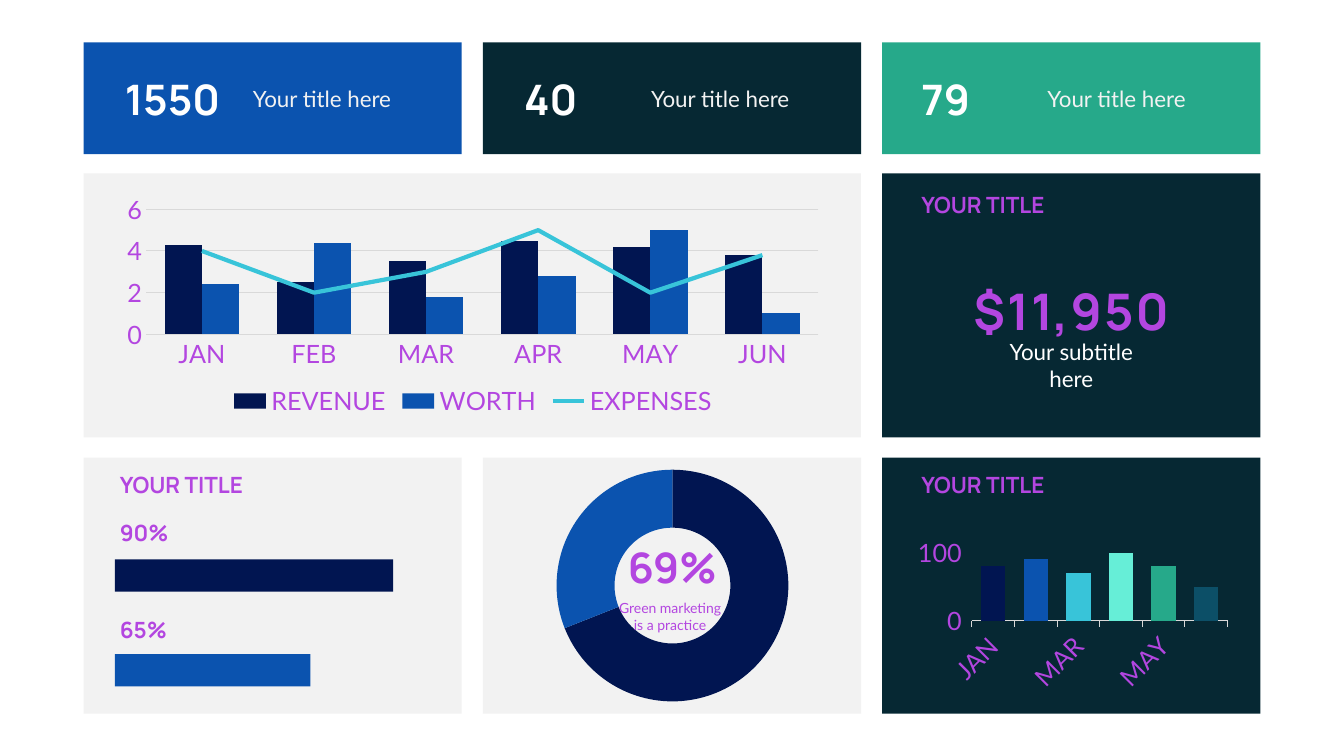
from lxml import etree
from pptx import Presentation
from pptx.chart.data import CategoryChartData
from pptx.dml.color import RGBColor
from pptx.enum.chart import XL_CHART_TYPE, XL_LEGEND_POSITION, XL_MARKER_STYLE, XL_TICK_MARK
from pptx.enum.shapes import MSO_SHAPE
from pptx.enum.text import MSO_ANCHOR, MSO_AUTO_SIZE, PP_ALIGN
from pptx.oxml import parse_xml
from pptx.oxml.ns import nsdecls, qn
from pptx.util import Inches, Pt

COLUMNS, DOUGHNUT = XL_CHART_TYPE.COLUMN_CLUSTERED, XL_CHART_TYPE.DOUGHNUT
LEGEND_BOTTOM, NO_MARKER = XL_LEGEND_POSITION.BOTTOM, XL_MARKER_STYLE.NONE
TICK_NONE, TICK_OUT = XL_TICK_MARK.NONE, XL_TICK_MARK.OUTSIDE
RECTANGLE, GROW = MSO_SHAPE.RECTANGLE, MSO_AUTO_SIZE.SHAPE_TO_FIT_TEXT
TOP, MIDDLE, BOTTOM = MSO_ANCHOR.TOP, MSO_ANCHOR.MIDDLE, MSO_ANCHOR.BOTTOM
LEFT, CENTER = PP_ALIGN.LEFT, PP_ALIGN.CENTER

WHITE = RGBColor(0xFF, 0xFF, 0xFF)
LIGHT = RGBColor(0xF2, 0xF2, 0xF2)
RULE = RGBColor(0xD9, 0xD9, 0xD9)
PURPLE = RGBColor(0xB3, 0x46, 0xE0)
NAVY = RGBColor(0x01, 0x15, 0x51)
BLUE = RGBColor(0x0B, 0x53, 0xAF)
CYAN = RGBColor(0x38, 0xC4, 0xD9)
MINT = RGBColor(0x66, 0xEE, 0xD7)
GREEN = RGBColor(0x26, 0xA9, 0x8A)
TEAL = RGBColor(0x0C, 0x4F, 0x67)
DARK = RGBColor(0x06, 0x28, 0x33)

MONTHS = ["JAN", "FEB", "MAR", "APR", "MAY", "JUN"]
CARD_LEFTS = [0.83 + 3.96 * column for column in range(3)]
CARD_WIDTH = 3.75
WIDE_WIDTH = 7.71

HEADING = {"name": "Manrope", "size": Pt(16), "bold": True, "color": PURPLE}
NUMBER = {**HEADING, "size": Pt(30)}
AMOUNT = {**HEADING, "size": Pt(36)}
LABEL = {"name": "Lato", "size": Pt(16), "color": LIGHT}
CAPTION = {**LABEL, "size": Pt(10), "color": PURPLE}
CHART_TEXT = {**LABEL, "size": Pt(18), "color": PURPLE}

LINE_PLOT = f"""<c:lineChart {nsdecls('c')}><c:grouping val="standard"/>
<c:varyColors val="0"/><c:marker val="1"/><c:axId val="501"/><c:axId val="502"/></c:lineChart>"""
HIDDEN_AXIS = """<c:{kind} {ns}><c:axId val="{own}"/><c:scaling><c:orientation val="minMax"/>{limits}
</c:scaling><c:delete val="1"/><c:axPos val="{side}"/><c:majorTickMark val="none"/>
<c:minorTickMark val="none"/><c:tickLblPos val="nextTo"/><c:crossAx val="{other}"/>
<c:crosses val="{crosses}"/></c:{kind}>"""


def apply_font(font, style):
    for name, value in style.items():
        if name == "color":
            font.color.rgb = value
        else:
            setattr(font, name, value)


def paint(format_holder, color):
    format_holder.fill.solid()
    format_holder.fill.fore_color.rgb = color


def style_axis(axis, tick, visible_line):
    axis.major_tick_mark = tick
    axis.has_major_gridlines = False
    apply_font(axis.tick_labels.font, CHART_TEXT)
    if visible_line:
        axis.format.line.color.rgb = RULE
        axis.format.line.width = Pt(0.75)
    else:
        axis.format.line.fill.background()


def move_last_series_to_line(chart, maximum):
    """Draw the last column series as a line on hidden secondary axes."""
    plot_area = chart._chartSpace.chart.plotArea
    bars = plot_area.find(qn("c:barChart"))
    series = bars.findall(qn("c:ser"))[-1]
    for invert in series.findall(qn("c:invertIfNegative")):
        series.remove(invert)
    line_plot = parse_xml(LINE_PLOT)
    line_plot.find(qn("c:varyColors")).addnext(series)
    bars.addnext(line_plot)
    limits = f'<c:max val="{maximum}"/><c:min val="0"/>'
    last_axis = plot_area.findall(qn("c:valAx"))[-1]
    for kind, own, other, side, scale, crosses in (
        ("valAx", 502, 501, "r", limits, "max"),
        ("catAx", 501, 502, "b", "", "autoZero"),
    ):
        last_axis.addnext(parse_xml(HIDDEN_AXIS.format(
            ns=nsdecls("c"), kind=kind, own=own, other=other,
            side=side, limits=scale, crosses=crosses)))
    return chart.plots[1].series[0]


def fill_plot_area(chart):
    """Stretch the inner plot area over the whole chart frame."""
    plot_area = chart._chartSpace.chart.plotArea
    for old in plot_area.findall(qn("c:layout")):
        plot_area.remove(old)
    layout = etree.SubElement(plot_area, qn("c:layout"))
    manual = etree.SubElement(layout, qn("c:manualLayout"))
    for tag, value in (("layoutTarget", "inner"), ("xMode", "edge"), ("yMode", "edge"),
                       ("x", "0"), ("y", "0"), ("w", "1"), ("h", "1")):
        etree.SubElement(manual, qn(f"c:{tag}")).set("val", value)
    plot_area.insert(0, layout)


class Dashboard:
    def __init__(self, slide):
        self.slide = slide

    def block(self, left, top, width, height, color):
        shape = self.slide.shapes.add_shape(
            RECTANGLE, Inches(left), Inches(top), Inches(width), Inches(height))
        shape.shadow.inherit = False
        paint(shape, color)
        shape.line.fill.background()

    def text(self, words, left, top, width, height, style, align=LEFT, anchor=MIDDLE, wrap=False):
        box = self.slide.shapes.add_textbox(
            Inches(left), Inches(top), Inches(width), Inches(height))
        frame = box.text_frame
        for name, value in {"word_wrap": wrap, "auto_size": GROW, "vertical_anchor": anchor}.items():
            setattr(frame, name, value)
        paragraph = frame.paragraphs[0]
        paragraph.alignment = align
        run = paragraph.add_run()
        run.text = words
        apply_font(run.font, style)
        return box

    def chart(self, kind, left, top, width, height, categories, series):
        data = CategoryChartData()
        data.categories = categories
        for name, values in series:
            data.add_series(name, values)
        chart = self.slide.shapes.add_chart(
            kind, Inches(left), Inches(top), Inches(width), Inches(height), data).chart
        chart.has_title = False
        chart.has_legend = False
        apply_font(chart.font, CHART_TEXT)
        return chart

    def finance_chart(self):
        chart = self.chart(COLUMNS, 1.12, 1.88, 7.14, 2.3, MONTHS, [
            ("REVENUE", [4.3, 2.5, 3.5, 4.5, 4.2, 3.8]),
            ("WORTH", [2.4, 4.4, 1.8, 2.8, 5, 1]),
            ("EXPENSES", [4, 2, 3, 5, 2, 3.8])])
        style_axis(chart.category_axis, TICK_NONE, True)
        axis = chart.value_axis
        style_axis(axis, TICK_NONE, False)
        for name, value in {"minimum_scale": 0, "maximum_scale": 6, "major_unit": 2}.items():
            setattr(axis, name, value)
        axis.major_gridlines.format.line.color.rgb = RULE
        axis.major_gridlines.format.line.width = Pt(0.75)
        expenses = move_last_series_to_line(chart, 6)
        expenses.smooth = False
        expenses.marker.style = NO_MARKER
        expenses.format.line.color.rgb = CYAN
        expenses.format.line.width = Pt(3)
        columns = chart.plots[0]
        columns.vary_by_categories = False
        columns.gap_width = 100
        for series, color in zip(columns.series, (NAVY, BLUE)):
            paint(series.format, color)
        chart.has_legend = True
        chart.legend.position = LEGEND_BOTTOM
        chart.legend.include_in_layout = False
        apply_font(chart.legend.font, CHART_TEXT)

    def share_chart(self):
        chart = self.chart(DOUGHNUT, 5.52, 4.66, 2.3, 2.3, ["1", "2"], [("Series 1", [69, 31])])
        fill_plot_area(chart)
        chart._chartSpace.find(".//" + qn("c:holeSize")).set("val", "85")
        self.paint_points(chart, (NAVY, BLUE))

    def monthly_chart(self):
        chart = self.chart(COLUMNS, 9.04, 5.11, 3.2, 1.79, MONTHS,
                           [("Series 1", [80, 90, 70, 100, 80, 50])])
        style_axis(chart.category_axis, TICK_OUT, True)
        style_axis(chart.value_axis, TICK_OUT, False)
        chart.plots[0].gap_width = 75
        chart.plots[0].overlap = 28
        self.paint_points(chart, (NAVY, BLUE, CYAN, MINT, GREEN, TEAL))

    def paint_points(self, chart, colors):
        for index, color in enumerate(colors):
            paint(chart.plots[0].series[0].points[index].format, color)


def main():
    presentation = Presentation()
    presentation.slide_width, presentation.slide_height = Inches(13.33), Inches(7.5)
    board = Dashboard(presentation.slides.add_slide(presentation.slide_layouts[6]))

    for left, top_color, bottom_color in zip(CARD_LEFTS, (BLUE, DARK, GREEN), (LIGHT, LIGHT, DARK)):
        board.block(left, 0.42, CARD_WIDTH, 1.11, top_color)
        board.block(left, 4.54, CARD_WIDTH, 2.54, bottom_color)
    board.block(CARD_LEFTS[0], 1.72, WIDE_WIDTH, 2.62, LIGHT)
    board.block(CARD_LEFTS[2], 1.72, CARD_WIDTH, 2.62, DARK)

    for number, left, width, label_left in (
            ("1550", 1.14, 1.18, 2.41), ("40", 5.1, 0.76, 6.36), ("79", 9.04, 0.69, 10.29)):
        board.text(number, left, 0.67, width, 0.61, {**NUMBER, "color": WHITE})
        board.text("Your title here", label_left, 0.79, 1.57, 0.37, LABEL)

    board.finance_chart()
    for percent, label_top, bar_top, width, color in (
            ("90%", 5.1, 5.55, 2.76, NAVY), ("65%", 6.06, 6.49, 1.94, BLUE)):
        board.block(1.14, bar_top, width, 0.32, color)
        board.text(percent, 1.09, label_top, 0.69, 0.37, HEADING)

    board.share_chart()
    board.text("69%", 6.12, 5.31, 1.1, 0.61, NUMBER, CENTER, BOTTOM)
    caption = board.text("Green marketing is a practice", 6.06, 5.9, 1.22, 0.44,
                         CAPTION, CENTER, TOP, True)
    caption.text_frame.margin_left = Inches(0.05)

    board.monthly_chart()
    for left, top in ((1.09, 4.62), (9.04, 4.62), (9.04, 1.84)):
        board.text("YOUR TITLE", left, top, 1.44, 0.37, HEADING)
    amount = board.text("$11,950", 9.54, 2.72, 2.17, 0.71, AMOUNT, CENTER)
    amount.text_frame.paragraphs[0].runs[0].font._element.set("spc", "150")
    board.text("Your subtitle here", 9.67, 3.44, 1.91, 0.37, {**LABEL, "color": WHITE}, CENTER)
    presentation.save("out.pptx")


if __name__ == "__main__":
    main()
